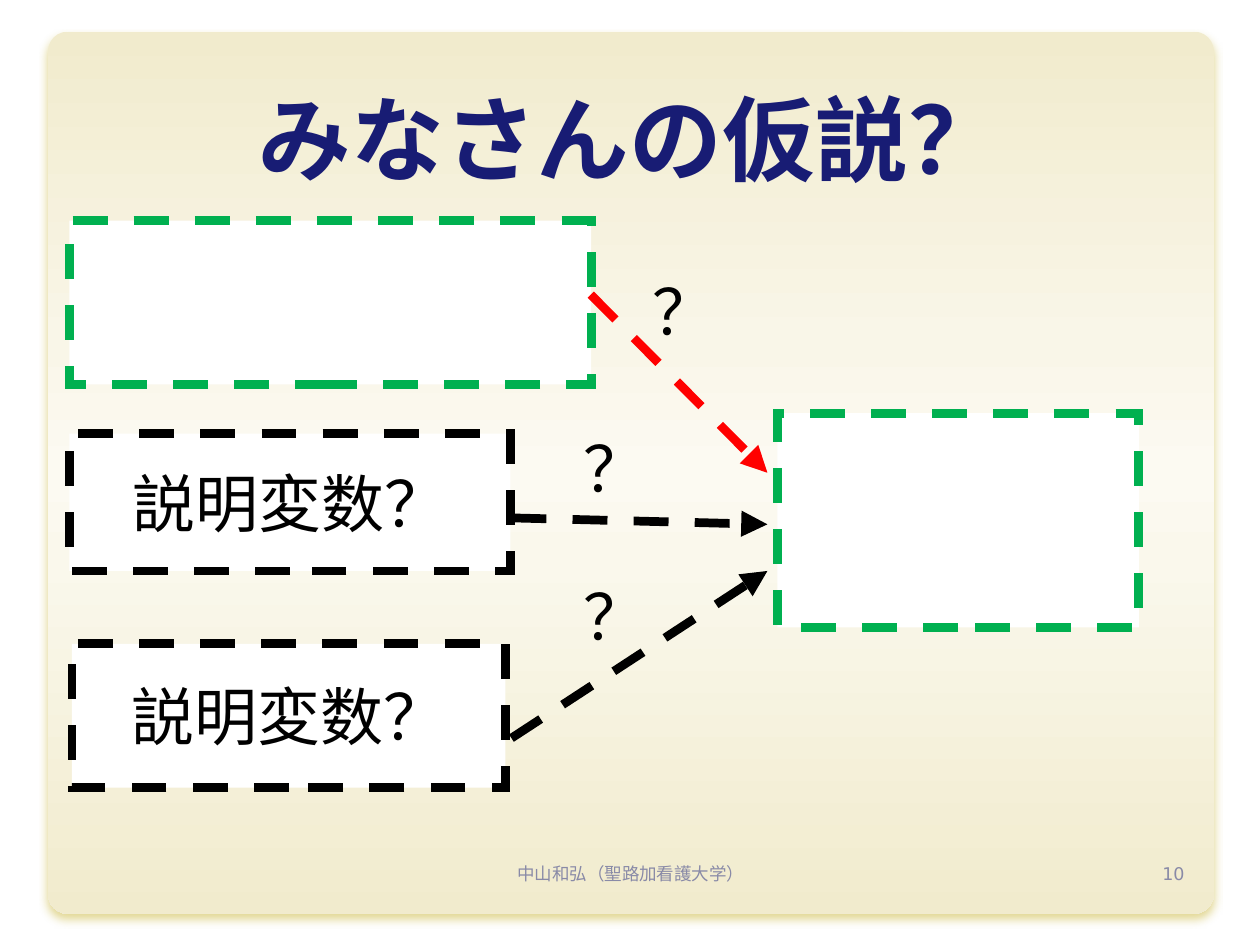
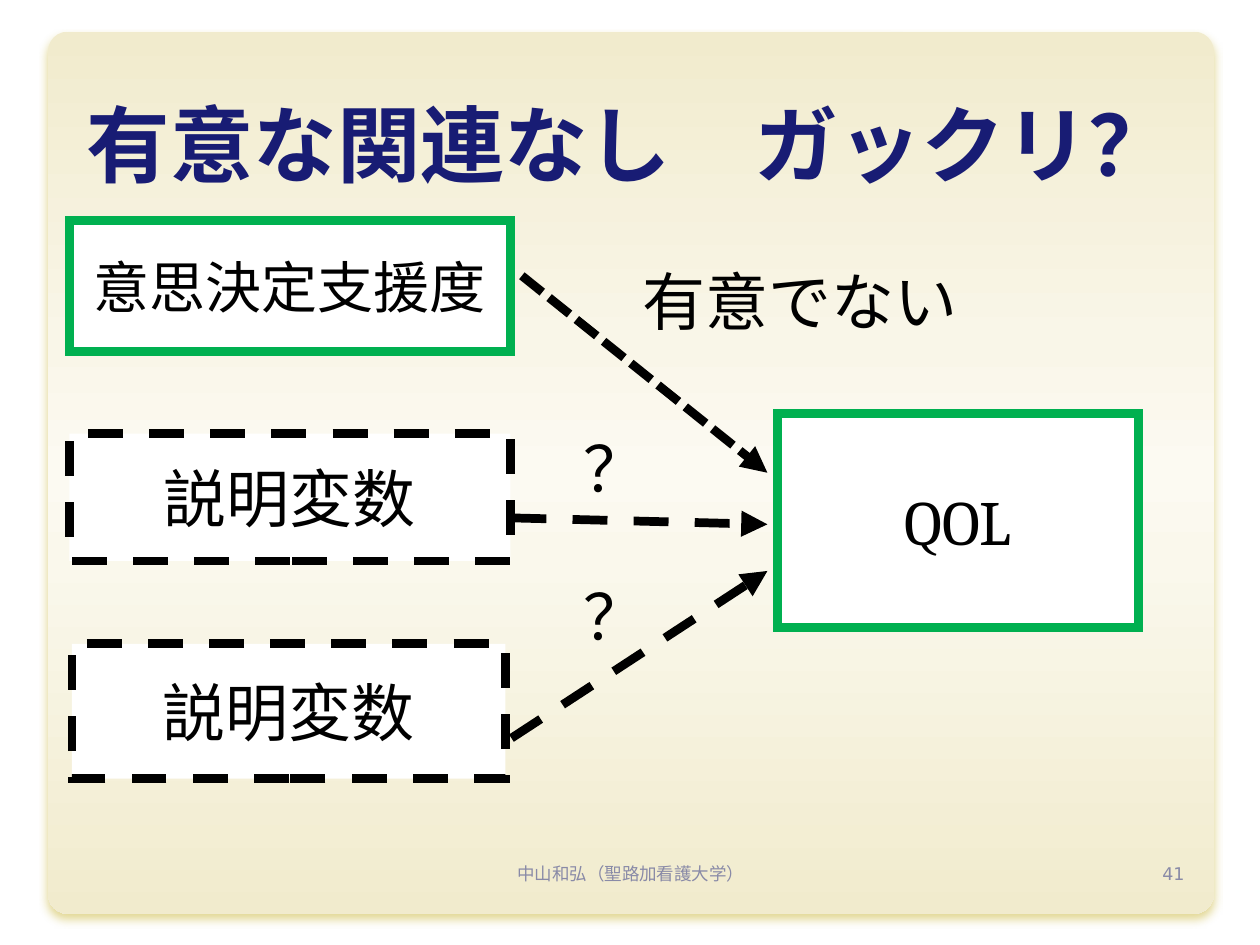
import pptx
import pptx.dml.color
import pptx.enum.dml
import pptx.enum.shapes
import pptx.enum.text
import pptx.oxml
import pptx.oxml.ns
import pptx.util
from dataclasses import dataclass
from lxml import etree

Cm = pptx.util.Cm
ALIGN = pptx.enum.text.PP_ALIGN
ANCHOR = pptx.enum.text.MSO_ANCHOR
DASH = pptx.enum.dml.MSO_LINE.DASH
SHORT_DASH = pptx.enum.dml.MSO_LINE.SQUARE_DOT
SHAPE = pptx.enum.shapes.MSO_SHAPE


@dataclass(frozen=True)
class Theme:
    navy: str = "181C74"
    black: str = "000000"
    white: str = "FFFFFF"
    green: str = "00B050"
    red: str = "FF0000"
    muted: str = "898AA7"
    glow: str = "C5AF25"
    panel_stops: tuple = ((0, "F1EBCD"), (35, "F9F6E8"), (50, "FCFAF2"),
                          (60, "FAF8EC"), (100, "F1EBCD"))
    title_font: str = "Roboto"
    box_font: str = "Cambria"
    label_font: str = "Calibri"
    support_font: str = "Arial"
    footer_font: str = "DejaVu Sans"
    body_size: float = 36
    support_size: float = 32
    footer_size: float = 10
    line_width: float = 5


THEME = Theme()
FOOTER = "中山和弘（聖路加看護大学）"

PANEL = (0.97, 0.64, 23.5, 17.78)
TITLE = (1.27, 0.84, 22.86, 3.18)
FOOTER_AREA = (8.69, 17.27, 8.05, 1.02)
NUMBER_AREA = (18.21, 17.27, 5.92, 1.02)
OUTCOME = (15.67, 8.33, 7.29, 4.32)
ARROW_END_X = 15.47
LABEL_HEIGHT = 1.8
SHARED_ARROWS = [
    ((10.31, 10.44), 10.57, THEME.black, DASH),
    ((10.31, 14.88), 11.51, THEME.black, DASH),
]
SHARED_LABELS = [("？", 11.51, 8.53, 2.77), ("？", 11.51, 11.51, 2.77)]

SLIDES = [
    {
        "title": "みなさんの仮説？", "title_size": 53, "number": "10",
        "outcome": "", "main_dash": DASH,
        "support": ("", (1.4, 4.45, 10.52, 3.3)),
        "variable": "説明変数？", "variable_heights": (2.77, 2.9),
        "main_arrow": ((11.91, 5.94), 9.53, THEME.red, DASH),
        "main_label": ("？", 12.9, 5.36, 2.77),
    },
    {
        "title": "有意な関連なし　ガックリ？", "title_size": 47.7, "number": "41",
        "outcome": "QOL", "main_dash": None,
        "support": ("意思決定支援度", (1.4, 4.45, 8.89, 2.64)),
        "variable": "説明変数", "variable_heights": (2.57, 2.72),
        "main_arrow": ((10.52, 5.56), 9.53, THEME.black, SHORT_DASH),
        "main_label": ("有意でない", 12.7, 5.16, 8.13),
    },
]


def rgb(color):
    return pptx.dml.color.RGBColor.from_string(color)


def place(area):
    return [Cm(length) for length in area]


def add_xml(parent, tag, **attributes):
    child = etree.SubElement(parent, pptx.oxml.ns.qn(tag))
    for name, value in attributes.items():
        child.set(name, str(value))
    return child


def write_text(shape, text, *, font, size, color=THEME.black, bold=False,
               align=ALIGN.LEFT, anchor=ANCHOR.TOP):
    frame = shape.text_frame
    frame.word_wrap = True
    frame.auto_size = pptx.enum.text.MSO_AUTO_SIZE.NONE
    frame.vertical_anchor = anchor
    paragraph = frame.paragraphs[0]
    paragraph.alignment = align
    run = paragraph.add_run()
    run.text = text
    run.font.name = font
    run.font.size = pptx.util.Pt(size)
    run.font.bold = bold
    run.font.color.rgb = rgb(color)


def style_line(shape, color, dash):
    shape.line.color.rgb = rgb(color)
    shape.line.width = pptx.util.Pt(THEME.line_width)
    if dash is not None:
        shape.line.dash_style = dash
    line = shape.line.get_or_add_ln() if hasattr(shape.line, "get_or_add_ln") \
        else shape.element.spPr.find(pptx.oxml.ns.qn("a:ln"))
    add_xml(line, "a:miter", lim=800000)
    return line


def add_panel(slide):
    panel = slide.shapes.add_shape(SHAPE.ROUNDED_RECTANGLE, *place(PANEL))
    panel.adjustments[0] = 0.022
    panel.line.fill.background()
    properties = panel.element.spPr
    gradient = etree.Element(pptx.oxml.ns.qn("a:gradFill"), rotWithShape="1")
    stops = add_xml(gradient, "a:gsLst")
    for position, color in THEME.panel_stops:
        stop = add_xml(stops, "a:gs", pos=position * 1000)
        add_xml(stop, "a:srgbClr", val=color)
    add_xml(gradient, "a:lin", ang=5400000, scaled=0)
    properties.find(pptx.oxml.ns.qn("a:ln")).addprevious(gradient)
    effects = add_xml(properties, "a:effectLst")
    shadow = add_xml(effects, "a:outerShdw", blurRad=pptx.util.Pt(5),
                     dist=pptx.util.Pt(3.6), dir=5400000, rotWithShape=0)
    add_xml(add_xml(shadow, "a:srgbClr", val=THEME.glow), "a:alpha", val=50000)
    slide.shapes.title.element.addprevious(panel.element)


def add_label(slide, text, area, **text_format):
    write_text(slide.shapes.add_textbox(*place(area)), text, **text_format)


def add_box(slide, text, area, color, dash, font=THEME.box_font,
            size=THEME.body_size):
    box = slide.shapes.add_shape(SHAPE.RECTANGLE, *place(area))
    box.shadow.inherit = False
    box.fill.solid()
    box.fill.fore_color.rgb = rgb(THEME.white)
    style_line(box, color, dash)
    if text:
        write_text(box, text, font=font, size=size,
                   align=ALIGN.CENTER, anchor=ANCHOR.MIDDLE)


def add_arrow(slide, start, end_y, color, dash):
    arrow = slide.shapes.add_connector(
        pptx.enum.shapes.MSO_CONNECTOR.STRAIGHT,
        *place((*start, ARROW_END_X, end_y)))
    add_xml(style_line(arrow, color, dash), "a:tailEnd", type="triangle")
    add_xml(arrow.element.spPr, "a:effectLst")


def add_frame(slide, content):
    title = slide.shapes.title
    title.left, title.top, title.width, title.height = place(TITLE)
    write_text(title, content["title"], font=THEME.title_font,
               size=content["title_size"], color=THEME.navy, bold=True,
               align=ALIGN.CENTER, anchor=ANCHOR.BOTTOM)
    add_panel(slide)
    for text, area, align in ((FOOTER, FOOTER_AREA, ALIGN.CENTER),
                              (content["number"], NUMBER_AREA, ALIGN.RIGHT)):
        add_label(slide, text, area, font=THEME.footer_font,
                  size=THEME.footer_size, color=THEME.muted, align=align)


def add_model(slide, content):
    add_box(slide, content["outcome"], OUTCOME, THEME.green, content["main_dash"])
    add_box(slide, *content["support"], THEME.green, content["main_dash"],
            font=THEME.support_font, size=THEME.support_size)
    upper_height, lower_height = content["variable_heights"]
    for area in ((1.4, 8.74, 8.89, upper_height), (1.45, 12.98, 8.74, lower_height)):
        add_box(slide, content["variable"], area, THEME.black, DASH)
    for arrow in [content["main_arrow"], *SHARED_ARROWS]:
        add_arrow(slide, *arrow)
    for text, left, top, width in [*SHARED_LABELS, content["main_label"]]:
        add_label(slide, text, (left, top, width, LABEL_HEIGHT),
                  font=THEME.label_font, size=THEME.body_size)


def main():
    presentation = pptx.Presentation()
    presentation.slide_width, presentation.slide_height = Cm(25.4), Cm(19.05)
    for content in SLIDES:
        slide = presentation.slides.add_slide(presentation.slide_layouts[5])
        add_frame(slide, content)
        add_model(slide, content)
    presentation.save("out.pptx")


if __name__ == "__main__":
    main()
